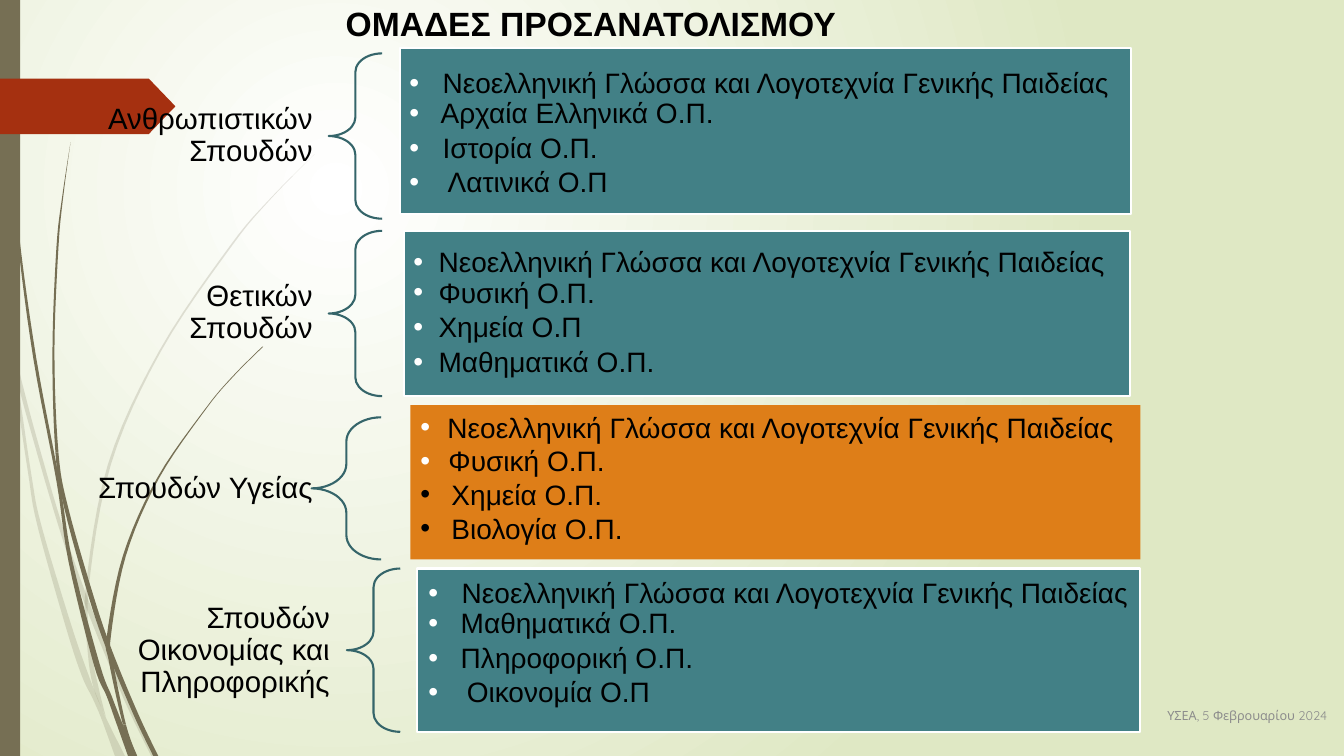
from lxml import etree
from pptx import Presentation
from pptx.dml.color import RGBColor
from pptx.enum.shapes import MSO_SHAPE
from pptx.enum.text import MSO_ANCHOR, PP_ALIGN
from pptx.oxml.ns import qn
from pptx.util import Inches, Pt

RECT, ARROW, BRACE = MSO_SHAPE.RECTANGLE, MSO_SHAPE.PENTAGON, MSO_SHAPE.LEFT_BRACE
TOP, MIDDLE = MSO_ANCHOR.TOP, MSO_ANCHOR.MIDDLE
LEFT, CENTER, RIGHT = PP_ALIGN.LEFT, PP_ALIGN.CENTER, PP_ALIGN.RIGHT
BLACK, WHITE = RGBColor(0, 0, 0), RGBColor(255, 255, 255)
PALE, GRAY = RGBColor(0xDF, 0xE8, 0xC4), RGBColor(0x8C, 0x8C, 0x8C)
BROWN, RED = RGBColor(0x76, 0x6F, 0x54), RGBColor(0xA5, 0x30, 0x10)
TEAL, DARK = RGBColor(0x42, 0x80, 0x86), RGBColor(0x35, 0x65, 0x6A)
ORANGE = RGBColor(0xDE, 0x7E, 0x18)
CELL = Inches(1)


def grid(*cells):
    return [round(c * CELL) for c in cells]


def text(box, lines, size=20, color=BLACK, font="Arial", bold=False, align=LEFT,
         anchor=MIDDLE, pads=(0.1, 0.05), space=None, dents=(), dots=(), gaps=()):
    frame = box.text_frame
    frame.word_wrap = True
    frame.vertical_anchor = anchor
    frame.margin_left = frame.margin_right = grid(pads[0])[0]
    frame.margin_top = frame.margin_bottom = grid(pads[1])[0]
    for i, line in enumerate(lines):
        para = frame.paragraphs[0] if i == 0 else frame.add_paragraph()
        if dents:
            dent = grid(dents[i])[0]
            props = para._p.get_or_add_pPr()
            props.set("marL", str(dent))
            props.set("indent", str(-dent))
            tint = etree.SubElement(props, qn("a:buClr"))
            etree.SubElement(tint, qn("a:srgbClr")).set("val", str(dots[i]))
            etree.SubElement(props, qn("a:buFont")).set("typeface", "Arial")
            etree.SubElement(props, qn("a:buChar")).set("char", "•")
        para.alignment = align
        if space:
            para.line_spacing = space
        if gaps and gaps[i]:
            para.space_before = Pt(gaps[i])
        run = para.add_run()
        run.text = line
        run.font.size, run.font.name, run.font.bold = Pt(size), font, bold
        run.font.color.rgb = color


deck = Presentation()
deck.slide_width, deck.slide_height = grid(13.33, 7.5)
slide = deck.slides.add_slide(deck.slide_layouts[6])
shapes = slide.shapes

back = slide.background.fill
back.gradient()
for stop, color, place in zip(back.gradient_stops, (WHITE, PALE), (0, 1)):
    stop.color.rgb, stop.position = color, place
line = next(slide._element.iter(qn("a:lin")))
ring = etree.Element(qn("a:path"), {"path": "circle"})
etree.SubElement(ring, qn("a:fillToRect"), l="50000", t="50000", r="100000", b="100000")
line.getparent().replace(line, ring)

WISPS = [
    (20, (2, 9), [(0, 2.82, 0), (0, 2.99, .04), (.1, 3.46, .01), (.14, 3.76, .03),
                  (.28, 4.7, .03), (.37, 5.21, .04), (.65, 6.21, .06), (.81, 6.7, .07),
                  (.92, 6.93, .05), (1.01, 7.14, .05), (1.14, 7.5, .1)]),
    (20, (4,), [(.14, 3.45, 0), (.17, 3.76, .04), (.32, 4.33, .04), (.58, 5.22, .04),
                (.84, 5.99, .05), (1.23, 6.94, .05), (1.5, 7.5, .05)]),
    (20, (5,), [(3.12, 1.53, 0), (2.68, 1.97, .01), (2.28, 2.44, .02), (1.58, 3.48, .02),
                (1.07, 4.61, .03), (.85, 5.84, .03), (.87, 6.46, .04), (.93, 6.83, .05),
                (1.05, 7.11, 0)]),
    (100, (5, 9), [(.03, 0, .01), (.04, .48, .01), (.07, 1.1, .01), (.17, 2.33, .02),
                   (.33, 3.55, .03), (.56, 4.77, .03), (.68, 5.57, .04), (.93, 6.59, .06),
                   (1.06, 6.91, .05), (1.16, 7.19, .06), (1.27, 7.5, .09)]),
    (100, (4, 5, 7), [(.7, 1.41, 0), (.62, 1.93, .01), (.56, 2.45, .02), (.52, 3.49, .02),
                      (.55, 4.49, .03), (.64, 5.05, .04), (.88, 5.92, .05),
                      (1.06, 6.45, .05), (1.32, 7.08, .05), (1.52, 7.5, .05)]),
    (100, (5, 6, 7), [(2.6, 3.44, .01), (2.31, 3.73, .01), (2.04, 4.05, .01),
                      (1.56, 4.74, .02), (1.22, 5.51, .03), (1.06, 6.31, .04),
                      (1.08, 6.56, .04), (1.22, 7.19, .03), (1.33, 7.5, .03)]),
]
STEPS = 6
for alpha, cuts, knots in WISPS:
    ends = [knots[0]] + knots + [knots[-1]]
    curve = []
    for a, b, c, d in zip(ends, ends[1:], ends[2:], ends[3:]):
        for k in range(STEPS):
            t = k / STEPS
            curve.append([q + t * (r - p + t * (2 * p - 5 * q + 4 * r - s
                          + t * (3 * q - p - 3 * r + s))) / 2
                          for p, q, r, s in zip(a, b, c, d)])
    curve.append(knots[-1])
    marks = [0, *cuts, len(knots) - 1]
    for head, tail in zip(marks, marks[1:]):
        part = curve[head * STEPS:tail * STEPS + 1]
        edge = [grid(x, y) for x, y, w in part]
        edge += [grid(x + w, y) for x, y, w in reversed(part)]
        path = shapes.build_freeform(*edge[0], scale=1.0)
        path.add_line_segments(edge[1:], close=True)
        wisp = path.convert_to_shape()
        wisp.shadow.inherit = False
        wisp.fill.solid()
        wisp.fill.fore_color.rgb = BROWN
        wisp.line.fill.background()
        if alpha < 100:
            tint = next(wisp._element.spPr.iter(qn("a:srgbClr")))
            etree.SubElement(tint, qn("a:alpha")).set("val", str(alpha * 1000))

FIRST = "Νεοελληνική Γλώσσα και Λογοτεχνία Γενικής Παιδείας"
ROWS = [
    ("Ανθρωπιστικών Σπουδών", (.6, .85, 2.66, .99), (3.26, .53, .53, 1.64),
     (3.97, .48, 7.25, 1.64), (3.97, .53, 7.24, 1.6), (.33, .31, .33, .38),
     ["Αρχαία Ελληνικά Ο.Π.", "Ιστορία Ο.Π.", "Λατινικά Ο.Π"]),
    ("Θετικών Σπουδών", (.6, 2.61, 2.66, .99), (3.26, 2.29, .53, 1.64),
     (4.01, 2.29, 7.2, 1.64), (4.01, 2.29, 7.2, 1.64), (.25,) * 4,
     ["Φυσική Ο.Π.", "Χημεία Ο.Π", "Μαθηματικά Ο.Π."]),
    ("Σπουδών Υγείας", (.6, 4.15, 2.66, 1.4), (3.09, 4.14, .69, 1.41),
     (4.07, 4.02, 7.24, 1.53), None, (.27, .28, .31, .31),
     ["Φυσική Ο.Π.", "Χημεία Ο.Π.", "Βιολογία Ο.Π."]),
    ("Σπουδών Οικονομίας και Πληροφορικής", (.8, 5.97, 2.63, .98), (3.44, 5.64, .53, 1.62),
     (4.14, 5.64, 7.17, 1.62), (4.16, 5.72, 7.17, 1.34), (.33, .32, .32, .38),
     ["Μαθηματικά Ο.Π.", "Πληροφορική Ο.Π.", "Οικονομία Ο.Π"]),
]
blocks = [(RECT, (0, 0, .2, 7.5), BROWN, None), (ARROW, (0, .78, 1.74, .55), RED, None)]
for name, label, brace, panel, body, dents, items in ROWS:
    blocks.append((BRACE, brace, None, DARK))
    blocks.append((RECT, panel, TEAL if body else ORANGE, WHITE if body else None))

drawn = {}
for kind, place, fill, edge in blocks:
    block = shapes.add_shape(kind, *grid(*place))
    block.shadow.inherit = False
    if fill:
        block.fill.solid()
        block.fill.fore_color.rgb = fill
    else:
        block.fill.background()
    if edge:
        block.line.color.rgb, block.line.width = edge, Pt(1.5)
    else:
        block.line.fill.background()
    if kind == BRACE:
        block.adjustments[0] = 0.35
    if kind == ARROW:
        block.adjustments[0] = 0.48
    drawn[place] = block

text(shapes.add_textbox(*grid(.91, .09, 9.9, .28)), ["ΟΜΑΔΕΣ ΠΡΟΣΑΝΑΤΟΛΙΣΜΟΥ"],
     size=24, bold=True, align=CENTER)
text(shapes.add_textbox(*grid(11.48, 6.94, 1.85, .32)), ["ΥΣΕΑ, 5 Φεβρουαρίου 2024"],
     size=9, font="Quicksand", color=GRAY)
for name, label, brace, panel, body, dents, items in ROWS:
    text(shapes.add_textbox(*grid(*label)), [name], size=21, align=RIGHT,
         pads=(.16, .06), space=.9)
    if body:
        text(shapes.add_textbox(*grid(*body)), [FIRST] + items, pads=(.09, .09), space=.9,
             dents=dents, dots=[WHITE] * 4, gaps=(0, 0, 3.1, 3.1))
    else:
        text(drawn[panel], [FIRST] + items, anchor=TOP, dents=dents,
             dots=[WHITE, WHITE, BLACK, BLACK])

deck.save("out.pptx")
